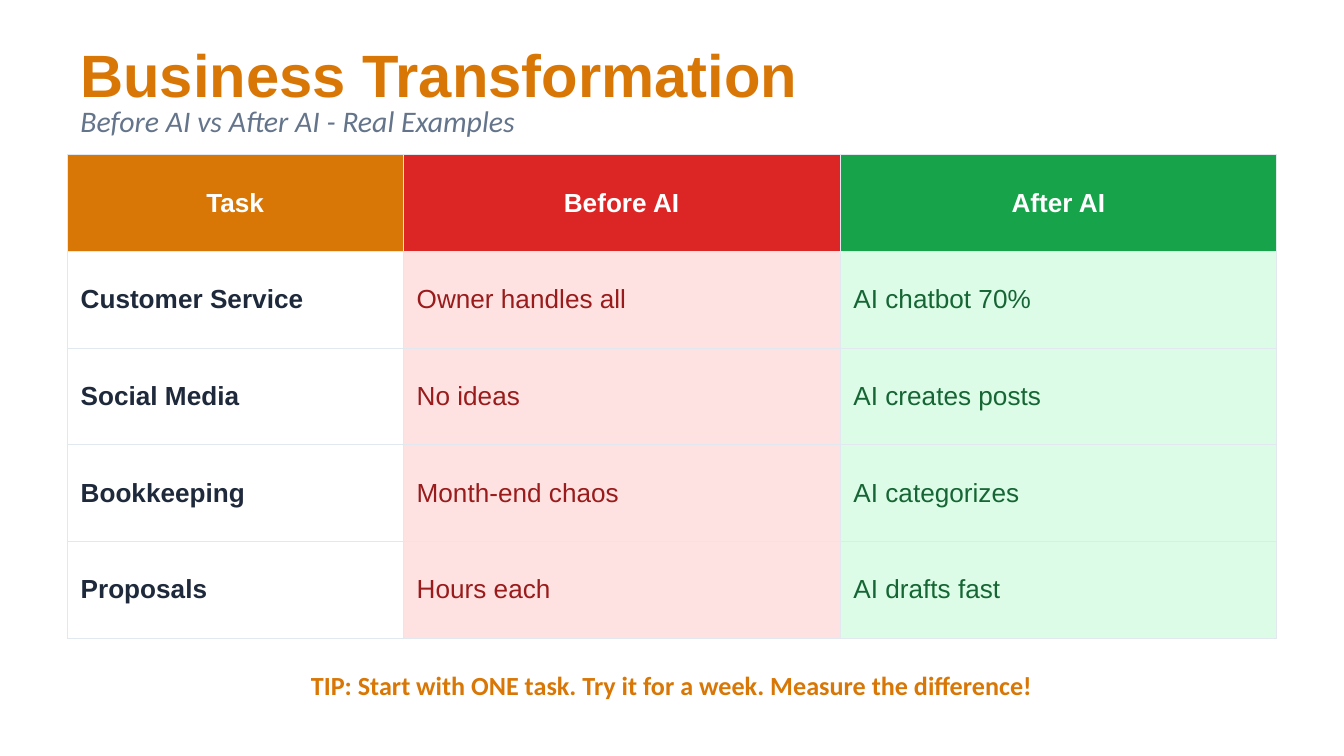
from dataclasses import dataclass

from lxml import etree
from pptx import Presentation
from pptx.dml.color import RGBColor
from pptx.enum.text import MSO_ANCHOR, PP_ALIGN
from pptx.oxml.ns import qn
from pptx.util import Inches, Pt

MIDDLE = MSO_ANCHOR.MIDDLE
LEFT, CENTER = PP_ALIGN.LEFT, PP_ALIGN.CENTER


@dataclass(frozen=True)
class Theme:
    heading_font: str = "Arial"
    body_font: str = "Calibri"
    title_size: int = 32
    subtitle_size: int = 16
    text_size: int = 14
    accent: str = "D97706"
    muted: str = "64748B"
    ink: str = "1E293B"
    white: str = "FFFFFF"
    border: str = "E2E8F0"
    border_width: float = 0.5
    before: str = "DC2626"
    before_text: str = "991B1B"
    before_tint: str = "FEE2E2"
    after: str = "16A34A"
    after_text: str = "166534"
    after_tint: str = "DCFCE7"


THEME = Theme()

COLUMNS = [
    ("Task", 2.5, THEME.accent, THEME.ink, None),
    ("Before AI", 3.25, THEME.before, THEME.before_text, THEME.before_tint),
    ("After AI", 3.25, THEME.after, THEME.after_text, THEME.after_tint),
]
TASKS = [
    ("Customer Service", "Owner handles all", "AI chatbot 70%"),
    ("Social Media", "No ideas", "AI creates posts"),
    ("Bookkeeping", "Month-end chaos", "AI categorizes"),
    ("Proposals", "Hours each", "AI drafts fast"),
]


def write(tf, text, font, size, color, bold=False, italic=False, align=LEFT):
    p = tf.paragraphs[0]
    p.alignment = align
    r = p.add_run()
    r.text = text
    r.font.name = font
    r.font.size = Pt(size)
    r.font.bold = bold
    r.font.italic = italic
    r.font.color.rgb = RGBColor.from_string(color)


def add_text(s, box, *args, **style):
    sp = s.shapes.add_textbox(*map(Inches, box))
    tf = sp.text_frame
    tf.word_wrap = True
    tf.vertical_anchor = MIDDLE
    write(tf, *args, **style)


def set_borders(cell):
    tcPr = cell._tc.get_or_add_tcPr()
    for i, side in enumerate(("lnL", "lnR", "lnT", "lnB")):
        ln = etree.Element(qn(f"a:{side}"), w=str(Pt(THEME.border_width)))
        fill = etree.SubElement(ln, qn("a:solidFill"))
        etree.SubElement(fill, qn("a:srgbClr"), val=THEME.border)
        tcPr.insert(i, ln)


def fill_cell(cell, text, fill, color, bold, align):
    cell.vertical_anchor = MIDDLE
    if fill:
        cell.fill.solid()
        cell.fill.fore_color.rgb = RGBColor.from_string(fill)
    else:
        cell.fill.background()
    set_borders(cell)
    write(cell.text_frame, text, THEME.heading_font, THEME.text_size, color,
          bold=bold, align=align)


def add_header(s, box):
    x, y, w, h = box
    add_text(s, (x, y, w, 0.5), "Business Transformation",
             THEME.heading_font, THEME.title_size, THEME.accent, bold=True)
    add_text(s, (x, y + h - 0.3, w, 0.3), "Before AI vs After AI - Real Examples",
             THEME.body_font, THEME.subtitle_size, THEME.muted, italic=True)


def add_comparison(s, box):
    rows = len(TASKS) + 1
    table = s.shapes.add_table(rows, len(COLUMNS), *map(Inches, box)).table
    table.horz_banding = False
    for row in table.rows:
        row.height = Inches(box[3] / rows)
    for col, (name, width, head_fill, color, tint) in enumerate(COLUMNS):
        table.columns[col].width = Inches(width)
        fill_cell(table.cell(0, col), name, head_fill, THEME.white, True, CENTER)
        for row, task in enumerate(TASKS, 1):
            fill_cell(table.cell(row, col), task[col], tint, color, col == 0, LEFT)


def add_tip(s, box):
    add_text(s, box,
             "TIP: Start with ONE task. Try it for a week. Measure the difference!",
             THEME.body_font, THEME.text_size, THEME.accent, bold=True, align=CENTER)


def main():
    prs = Presentation()
    prs.slide_width = Inches(10)
    prs.slide_height = prs.slide_width * 9 // 16
    s = prs.slides.add_slide(prs.slide_layouts[6])
    s.background.fill.solid()
    s.background.fill.fore_color.rgb = RGBColor.from_string(THEME.white)
    add_header(s, (0.5, 0.3, 9, 0.75))
    add_comparison(s, (0.5, 1.15, 9, 3.6))
    add_tip(s, (0.5, 4.9, 9, 0.4))
    prs.save("out.pptx")


if __name__ == "__main__":
    main()
